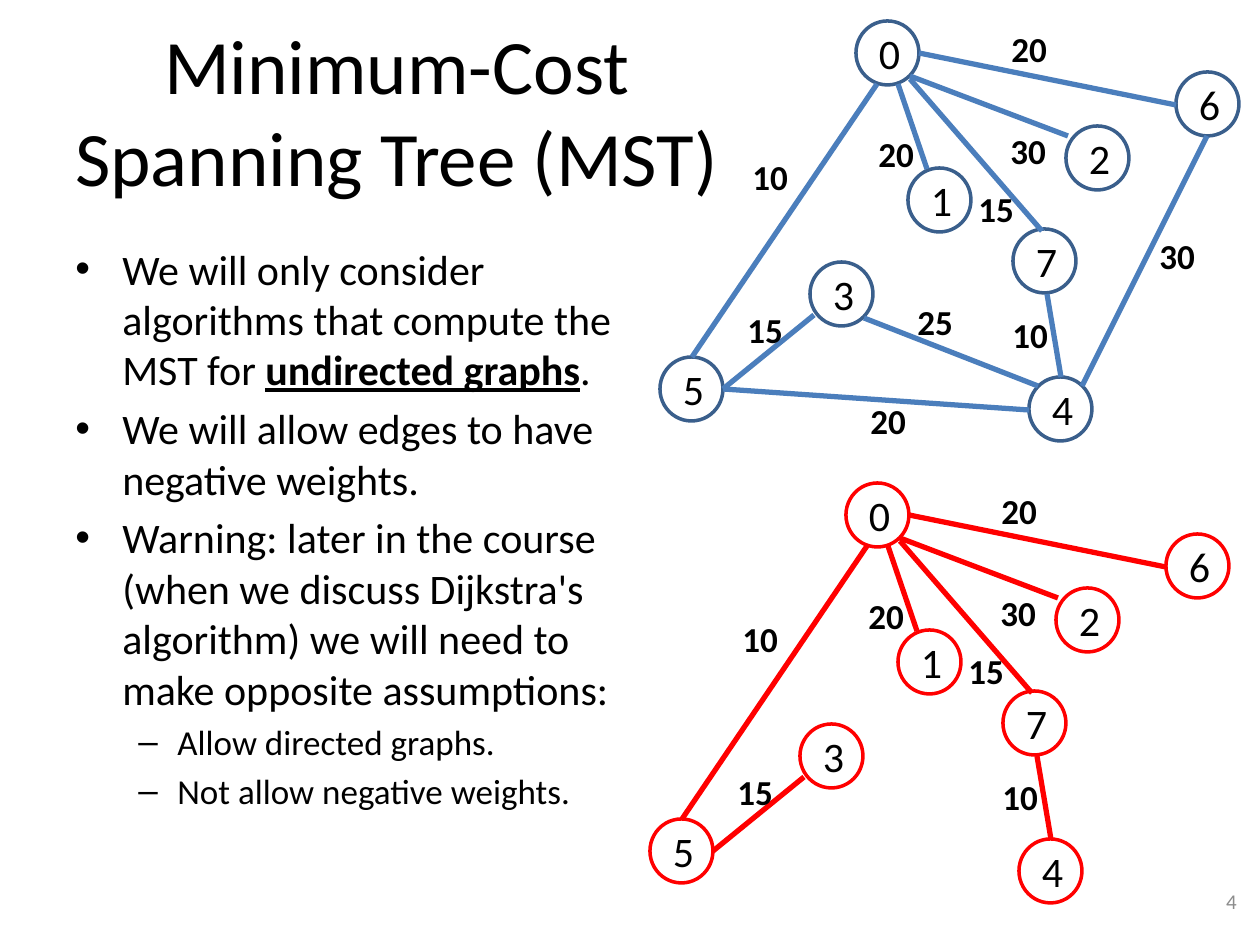
"""Build the minimum-cost spanning tree slide: bullets, a weighted graph and its tree."""
from lxml.etree import SubElement
from pptx import Presentation
from pptx.dml.color import RGBColor as RGB
from pptx.enum.shapes import MSO_CONNECTOR as CONN, MSO_SHAPE as SHAPE
from pptx.enum.text import MSO_ANCHOR as ANCHOR, PP_ALIGN as ALIGN
from pptx.oxml.ns import qn
from pptx.util import Inches, Pt

PX = Inches(1) / 126
COLORS = {"text": "000000", "number": "8C8C8C", "node": "3A5F8C", "edge": "4B7EBC", "tree": "FF0000"}


def px(*values):
    return [round(v * PX) for v in values]


def add_run(p, text, size, color="text", bold=False, underline=False):
    r = p.add_run()
    r.text = text
    r.font.name = "Calibri"
    r.font.size = Pt(size)
    r.font.bold = bold
    r.font.underline = underline
    r.font.color.rgb = RGB.from_string(COLORS[color])


prs = Presentation()
prs.slide_width, prs.slide_height = px(1260, 945)
s = prs.slides.add_slide(prs.slide_layouts[5])

title = s.shapes.title
title.left, title.top, title.width, title.height = px(53, 31, 688, 158)
tf = title.text_frame
tf.vertical_anchor = ANCHOR.MIDDLE
tf.paragraphs[0].alignment = ALIGN.CENTER
add_run(tf.paragraphs[0], "Minimum-Cost Spanning Tree (MST)", 44)

bullets = [
    (0, ["We will only consider algorithms that compute the MST for ", "undirected graphs", "."]),
    (0, ["We will allow edges to have negative weights."]),
    (0, ["Warning: later in the course (when we discuss Dijkstra's algorithm) "
         "we will need to make opposite assumptions:"]),
    (1, ["Allow directed graphs."]),
    (1, ["Not allow negative weights."]),
]
levels = [("•", 24, 47, -47), ("–", 20, 102, -39)]
tf = s.shapes.add_textbox(*px(63, 237, 567, 645)).text_frame
tf.word_wrap = True
for i, (level, texts) in enumerate(bullets):
    char, size, margin, indent = levels[level]
    p = tf.paragraphs[0] if i == 0 else tf.add_paragraph()
    p.level = level
    p.space_before = Pt(size / 5)
    pPr = p._p.get_or_add_pPr()
    pPr.set("marL", str(px(margin)[0]))
    pPr.set("indent", str(px(indent)[0]))
    SubElement(pPr, qn("a:buFont"), typeface="Arial")
    SubElement(pPr, qn("a:buChar"), char=char)
    for text in texts:
        key_term = text == "undirected graphs"
        add_run(p, text, size, bold=key_term, underline=key_term)

tf = s.shapes.add_textbox(*px(955, 876, 294, 50)).text_frame
tf.word_wrap = True
tf.vertical_anchor = ANCHOR.MIDDLE
tf.paragraphs[0].alignment = ALIGN.RIGHT
add_run(tf.paragraphs[0], "4", 12, "number")

nodes = {
    "0": (856, 21), "1": (908, 168), "7": (1013, 229), "2": (1066, 126),
    "5": (660, 357), "3": (810, 262), "4": (1029, 377), "6": (1176, 72),
}
tree_edges = [
    ("20", (919, 53, 1176, 105), (999, 21)),
    ("30", (910, 76, 1068, 136), (998, 123)),
    ("20", (898, 84, 927, 169), (866, 126)),
    ("10", (877, 84, 692, 357), (740, 149)),
    ("15", (910, 79, 1042, 231), (966, 181)),
    ("15", (723, 389, 814, 315), (735, 302)),
    ("10", (1047, 294, 1061, 377), (1000, 307)),
]
other_edges = [
    ("20", (723, 389, 1029, 410), (858, 393)),
    ("25", (864, 318, 1038, 386), (905, 294)),
    ("30", (1207, 136, 1082, 386), (1147, 228)),
]
graphs = [
    (0, 0, tree_edges + other_edges, "node", "edge"),
    (-10, 462, tree_edges, "tree", "tree"),
]

for dx, dy, edges, node_color, edge_color in graphs:
    graph = s.shapes.add_group_shape().shapes
    for name, (x, y) in nodes.items():
        sp = graph.add_shape(SHAPE.OVAL, *px(x + dx, y + dy, 63, 64))
        sp.shadow.inherit = False
        sp.fill.background()
        sp.line.color.rgb = RGB.from_string(COLORS[node_color])
        sp.line.width = Pt(2)
        tf = sp.text_frame
        tf.margin_left, tf.margin_top, tf.margin_right, tf.margin_bottom = px(4, 0, 0, 0)
        tf.vertical_anchor = ANCHOR.MIDDLE
        tf.paragraphs[0].alignment = ALIGN.CENTER
        add_run(tf.paragraphs[0], name, 24)
    for weight, (x1, y1, x2, y2), (x, y) in edges:
        line = graph.add_connector(CONN.STRAIGHT, *px(x1 + dx, y1 + dy, x2 + dx, y2 + dy))
        line.line.color.rgb = RGB.from_string(COLORS[edge_color])
        line.line.width = Pt(3)
        SubElement(line._element.spPr, qn("a:effectLst"))
        tf = graph.add_textbox(*px(x + dx, y + dy, 62, 55)).text_frame
        tf.word_wrap = False
        add_run(tf.paragraphs[0], weight, 20, bold=True)

prs.save("out.pptx")
